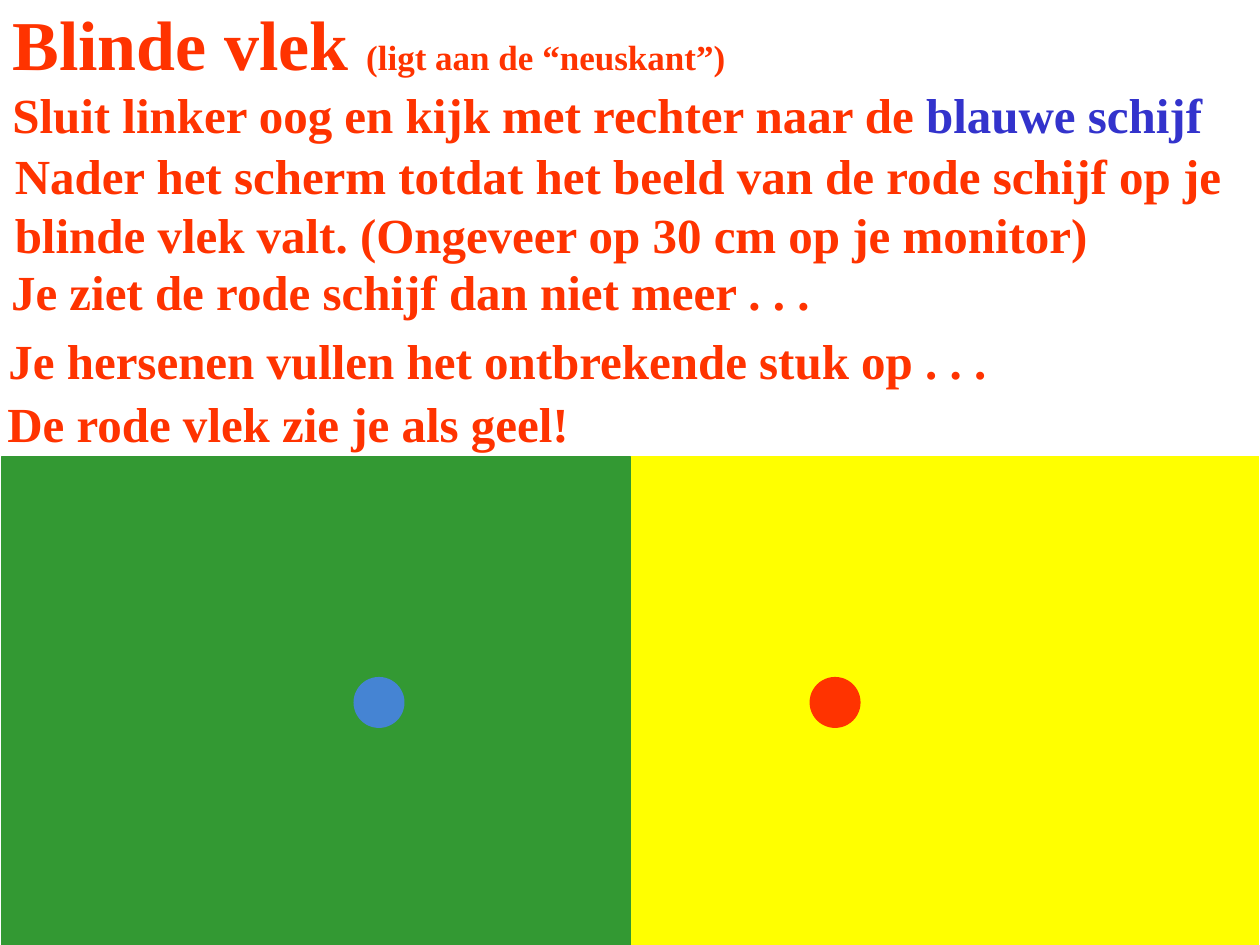
"""Build the blind spot experiment slide."""
from pptx import Presentation
from pptx.dml.color import RGBColor
from pptx.enum import shapes, text
from pptx.util import Pt

RED, BLUE = "FF3300", "3333CC"


def rgb(value):
    return RGBColor.from_string(value)


def write(tf, runs):
    tf.word_wrap = True
    tf.auto_size = text.MSO_AUTO_SIZE.NONE
    tf.vertical_anchor = text.MSO_ANCHOR.MIDDLE
    p = tf.paragraphs[0]
    p.alignment = text.PP_ALIGN.LEFT
    for content, size, color in runs:
        r = p.add_run()
        r.text = content
        r.font.name = "Times New Roman"
        r.font.size = Pt(size)
        r.font.bold = True
        r.font.color.rgb = rgb(color)


prs = Presentation()
prs.slide_width, prs.slide_height = Pt(720), Pt(540)
s = prs.slides.add_slide(prs.slide_layouts[5])

RECT, DISC = shapes.MSO_SHAPE.RECTANGLE, shapes.MSO_SHAPE.OVAL
test_field = s.shapes.add_group_shape()
for kind, left, top, width, height, color in [
    (RECT, 360.5, 260.8, 358.8, 281.2, "FFFF00"),
    (RECT, 1.2, 260.8, 358.8, 281.2, "339933"),
    (DISC, 463, 387.2, 28.4, 28.4, RED),
    (DISC, 202.4, 387.2, 28.4, 28.4, "4584D3"),
]:
    sp = test_field.shapes.add_shape(kind, Pt(left), Pt(top), Pt(width), Pt(height))
    sp.shadow.inherit = False
    sp.fill.solid()
    sp.fill.fore_color.rgb = rgb(color)
    sp.line.color.rgb = rgb(color)
    sp.line.width = Pt(0.75)

title = s.shapes.title
title.left, title.top, title.width, title.height = Pt(0), Pt(0), Pt(720), Pt(49)
write(title.text_frame, [("Blinde vlek ", 40, RED), ("(ligt aan de “neuskant”)", 20, RED)])

for left, top, height, parts in [
    (0, 45.4, 39.6, [("Sluit linker oog en kijk met rechter naar de ", RED), ("blauwe schijf", BLUE)]),
    (1.4, 80, 73.4, [("Nader het scherm totdat het beeld van de rode schijf op je blinde vlek valt. "
                      "(Ongeveer op 30 cm op je monitor)", RED)]),
    (-0.7, 137.5, 56.9, [("Je ziet de rode schijf dan niet meer . . .", RED)]),
    (-2.2, 177.1, 56.9, [("Je hersenen vullen het ontbrekende stuk op . . .", RED)]),
    (-2.9, 213.1, 56.9, [("De rode vlek zie je als geel!", RED)]),
]:
    box = s.shapes.add_textbox(Pt(left), Pt(top), Pt(720), Pt(height))
    write(box.text_frame, [(content, 28, color) for content, color in parts])

prs.save("out.pptx")
